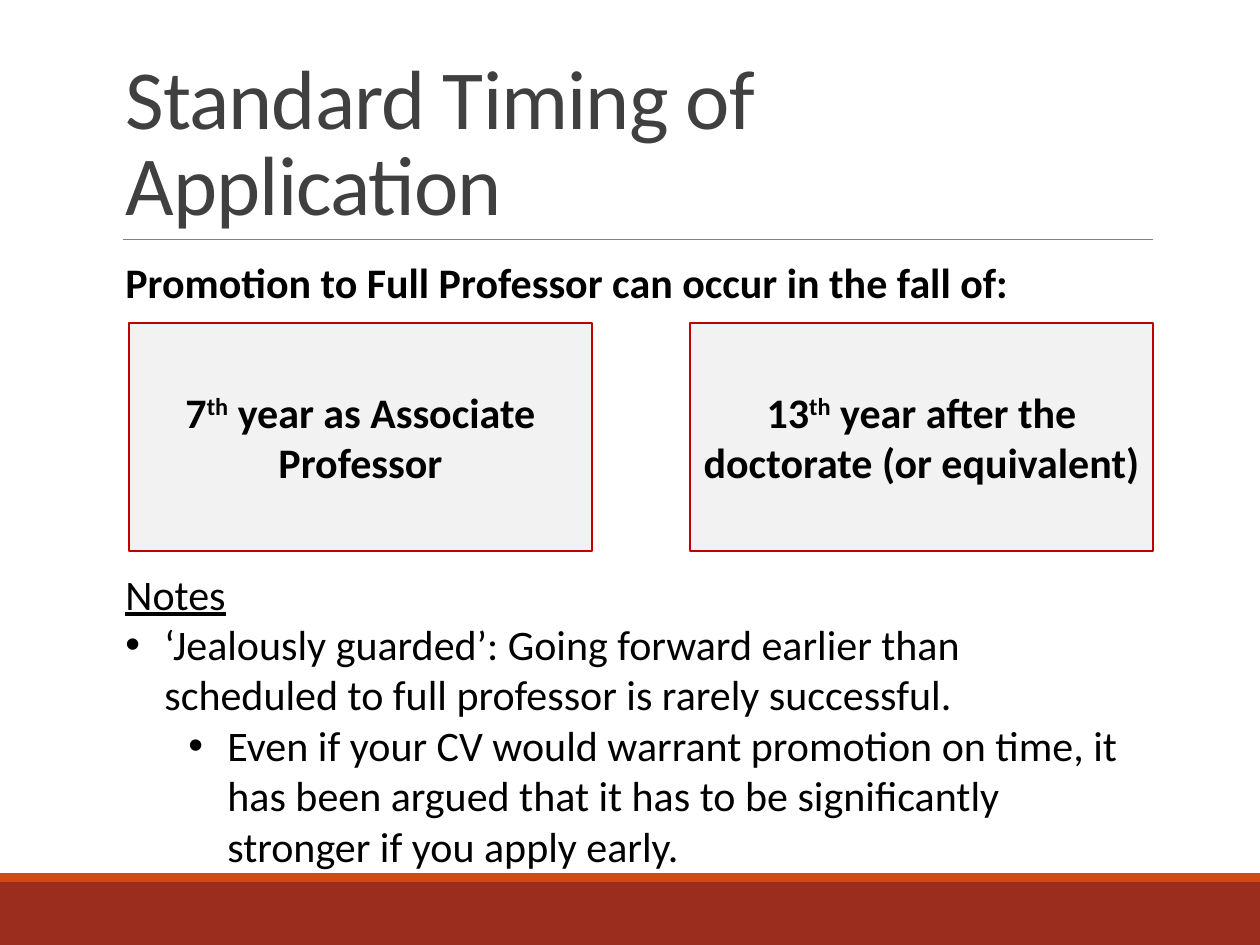
from dataclasses import dataclass

import pptx
import pptx.dml.color
import pptx.enum.shapes
import pptx.enum.text
import pptx.oxml
import pptx.oxml.ns
import pptx.util

EMU_PER_PX = 914400 / 126
FONT = "Calibri"
BLACK = "000000"


@dataclass(frozen=True)
class Box:
    left: int
    top: int
    width: int
    height: int


@dataclass(frozen=True)
class Run:
    text: str
    size: int = 24
    color: str = BLACK
    bold: bool = False
    underline: bool = False
    superscript: bool = False
    spacing: float = 0


@dataclass(frozen=True)
class Bullet:
    text: str
    level: int


@dataclass(frozen=True)
class Milestone:
    left: int
    number: str
    description: str


BANDS = [(Box(0, 882, 1260, 63), "9B2D1F"), (Box(0, 873, 1260, 9), "D34817")]
MILESTONES = [
    Milestone(129, "7", " year as Associate Professor"),
    Milestone(690, "13", " year after the doctorate (or equivalent)"),
]
BULLETS = [
    Bullet("‘Jealously guarded’: Going forward earlier than scheduled to full "
           "professor is rarely successful.", 0),
    Bullet("Even if your CV would warrant promotion on time, it has been argued "
           "that it has to be significantly stronger if you apply early.", 1),
]


def px(length: int) -> pptx.util.Emu:
    return pptx.util.Emu(round(length * EMU_PER_PX))


def place(box: Box) -> tuple:
    return px(box.left), px(box.top), px(box.width), px(box.height)


def rgb(color: str) -> pptx.dml.color.RGBColor:
    return pptx.dml.color.RGBColor.from_string(color)


def add_run(paragraph, run: Run) -> None:
    text_run = paragraph.add_run()
    text_run.text = run.text
    font = text_run.font
    font.name = FONT
    font.size = pptx.util.Pt(run.size)
    font.bold = run.bold
    font.underline = run.underline
    font.color.rgb = rgb(run.color)
    properties = text_run._r.get_or_add_rPr()
    if run.superscript:
        properties.set("baseline", "30000")
    if run.spacing:
        properties.set("spc", str(round(run.spacing * 100)))


def add_text_box(slide, box: Box):
    text_frame = slide.shapes.add_textbox(*place(box)).text_frame
    text_frame.word_wrap = True
    return text_frame


def add_rectangle(slide, box: Box, fill: str, line: str | None = None):
    shape = slide.shapes.add_shape(
        pptx.enum.shapes.MSO_SHAPE.RECTANGLE, *place(box))
    shape.shadow.inherit = False
    shape.fill.solid()
    shape.fill.fore_color.rgb = rgb(fill)
    if line:
        shape.line.color.rgb = rgb(line)
        shape.line.width = pptx.util.Pt(1.25)
    else:
        shape.line.fill.background()
    return shape


def add_rule(slide, left: int, right: int, y: int) -> None:
    connector = slide.shapes.add_connector(
        pptx.enum.shapes.MSO_CONNECTOR.STRAIGHT, px(left), px(y), px(right), px(y))
    connector.line.color.rgb = rgb("808080")
    connector.line.width = pptx.util.Pt(0.5)
    connector._element.spPr.append(pptx.oxml.parse_xml(
        f"<a:effectLst {pptx.oxml.ns.nsdecls('a')}/>"))


def add_title(slide, text: str) -> None:
    text_frame = add_text_box(slide, Box(113, 39, 1040, 200))
    text_frame.vertical_anchor = pptx.enum.text.MSO_ANCHOR.BOTTOM
    paragraph = text_frame.paragraphs[0]
    paragraph.line_spacing = 0.85
    add_run(paragraph, Run(text, size=48, color="404040", spacing=-0.5))


def add_milestone(slide, milestone: Milestone) -> None:
    shape = add_rectangle(
        slide, Box(milestone.left, 323, 463, 228), "F2F2F2", "C00000")
    text_frame = shape.text_frame
    text_frame.word_wrap = True
    text_frame.vertical_anchor = pptx.enum.text.MSO_ANCHOR.MIDDLE
    paragraph = text_frame.paragraphs[0]
    paragraph.alignment = pptx.enum.text.PP_ALIGN.CENTER
    add_run(paragraph, Run(milestone.number, bold=True))
    add_run(paragraph, Run("th", bold=True, superscript=True))
    add_run(paragraph, Run(milestone.description, bold=True))


def add_bullet(text_frame, bullet: Bullet) -> None:
    paragraph = text_frame.add_paragraph()
    paragraph.level = bullet.level
    indent = 39
    properties = paragraph._p.get_or_add_pPr()
    properties.set("marL", str(px(indent + 63 * bullet.level)))
    properties.set("indent", str(px(-indent)))
    namespace = pptx.oxml.ns.nsdecls("a")
    properties.append(pptx.oxml.parse_xml(
        f'<a:buFont {namespace} typeface="Arial"/>'))
    properties.append(pptx.oxml.parse_xml(f'<a:buChar {namespace} char="•"/>'))
    add_run(paragraph, Run(bullet.text))


def main() -> None:
    presentation = pptx.Presentation()
    presentation.slide_width = px(1260)
    presentation.slide_height = px(945)
    slide = presentation.slides.add_slide(presentation.slide_layouts[6])

    for box, color in BANDS:
        add_rectangle(slide, box, color)
    add_rule(slide, 123, 1153, 239)
    add_title(slide, "Standard Timing of Application")

    introduction = add_text_box(slide, Box(113, 250, 975, 63))
    add_run(introduction.paragraphs[0],
            Run("Promotion to Full Professor can occur in the fall of:", bold=True))

    for milestone in MILESTONES:
        add_milestone(slide, milestone)

    notes = add_text_box(slide, Box(113, 562, 1040, 318))
    add_run(notes.paragraphs[0], Run("Notes", underline=True))
    for bullet in BULLETS:
        add_bullet(notes, bullet)

    presentation.save("out.pptx")


if __name__ == "__main__":
    main()
